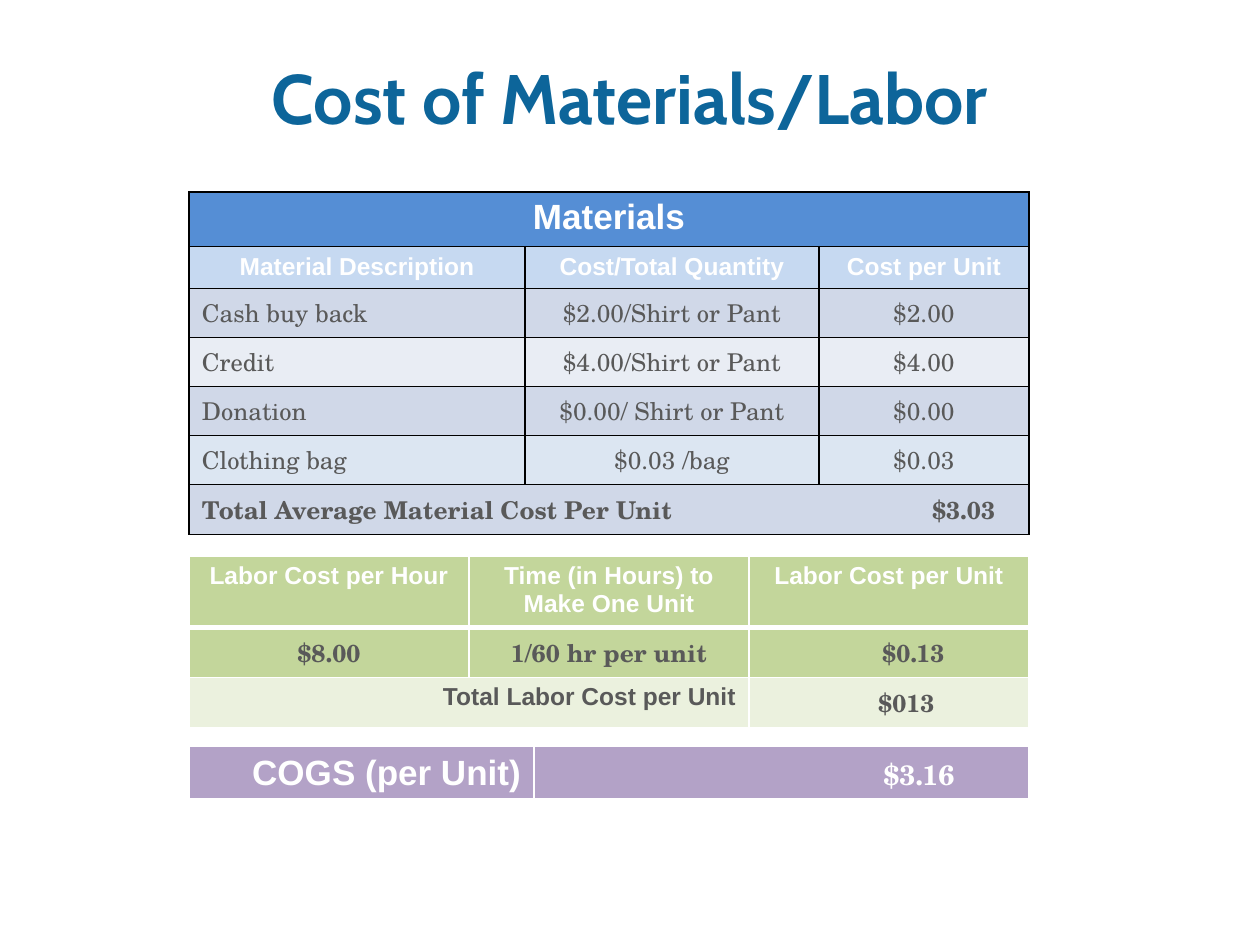
from dataclasses import dataclass
from typing import Any

from lxml.etree import SubElement
from pptx import Presentation
from pptx.dml.color import RGBColor
from pptx.enum.text import MSO_ANCHOR as Anchor, PP_ALIGN as Align
from pptx.oxml.ns import qn
from pptx.util import Emu, Pt

PX_PER_INCH = 126
INSET = 13
LEFT = 189

WHITE = RGBColor(0xFF, 0xFF, 0xFF)
BLACK = RGBColor(0x00, 0x00, 0x00)
GRAY = RGBColor(0x59, 0x59, 0x59)
TITLE_BLUE = RGBColor(0x0D, 0x65, 0x9A)
BLUE = RGBColor(0x55, 0x8E, 0xD5)
LIGHT_BLUE = RGBColor(0xC6, 0xD9, 0xF1)
BAND_DARK = RGBColor(0xD0, 0xD8, 0xE8)
BAND_LIGHT = RGBColor(0xE9, 0xED, 0xF4)
BAND_BAG = RGBColor(0xDC, 0xE6, 0xF2)
GREEN = RGBColor(0xC3, 0xD6, 0x9B)
LIGHT_GREEN = RGBColor(0xEB, 0xF1, 0xDE)
PURPLE = RGBColor(0xB3, 0xA2, 0xC7)


def px(length: int) -> Emu:
    return Emu(round(length * 914400 / PX_PER_INCH))


@dataclass(frozen=True)
class TextStyle:
    font: str
    size: int
    color: RGBColor
    bold: bool = True


@dataclass(frozen=True)
class CellSpec:
    text: str
    style: TextStyle
    align: Align = Align.CENTER
    span: int = 1
    indent: int = 0  # extra left inset, px
    tab: int = 0  # tab stop, px


@dataclass(frozen=True)
class RowSpec:
    height: int
    fill: RGBColor
    cells: list[CellSpec]
    bottom: int = 1  # lower border, points


@dataclass(frozen=True)
class TableSpec:
    top: int
    columns: list[int]
    rows: list[RowSpec]
    border: RGBColor
    anchor: Anchor = Anchor.TOP


TITLE = TextStyle("Cabin", 40, TITLE_BLUE)
BANNER = TextStyle("Arial", 20, WHITE)
HEADER = TextStyle("Arial", 14, WHITE)
LABEL = TextStyle("Arial", 14, GRAY)
BODY = TextStyle("TeX Gyre Schola", 14, GRAY, False)
STRONG = TextStyle("TeX Gyre Schola", 14, GRAY)
RESULT = TextStyle("TeX Gyre Schola", 16, WHITE)


def set_attributes(target: Any, values: dict[str, Any]) -> None:
    for name, value in values.items():
        setattr(target, name, value)


def write_text(paragraph: Any, text: str, style: TextStyle, align: Align) -> None:
    paragraph.alignment = align
    run = paragraph.add_run()
    run.text = text
    set_attributes(run.font, {"name": style.font, "size": Pt(style.size),
                              "bold": style.bold})
    run.font.color.rgb = style.color


def add_borders(cell: Any, color: RGBColor, top: int, bottom: int) -> None:
    properties = cell._tc.get_or_add_tcPr()
    widths = {"a:lnL": 1, "a:lnR": 1, "a:lnT": top, "a:lnB": bottom}
    for tag, width in widths.items():
        line = SubElement(properties, qn(tag), w=str(Pt(width)))
        fill = SubElement(line, qn("a:solidFill"))
        SubElement(fill, qn("a:srgbClr"), val=str(color))


def fill_cell(cell: Any, item: CellSpec, anchor: Anchor) -> None:
    set_attributes(cell, {"margin_left": px(INSET + item.indent),
                          "margin_right": px(INSET),
                          "vertical_anchor": anchor})
    paragraph = cell.text_frame.paragraphs[0]
    if item.tab:
        tabs = SubElement(paragraph._p.get_or_add_pPr(), qn("a:tabLst"))
        SubElement(tabs, qn("a:tab"), pos=str(px(item.tab)), algn="l")
    write_text(paragraph, item.text, item.style, item.align)


def draw_table(slide: Any, table_spec: TableSpec) -> None:
    rows, columns = table_spec.rows, table_spec.columns
    frame = slide.shapes.add_table(
        len(rows), len(columns), px(LEFT), px(table_spec.top),
        px(sum(columns)), px(sum(row.height for row in rows)))
    table = frame.table
    set_attributes(table, {"first_row": False, "horz_banding": False})
    for column, width in zip(table.columns, columns):
        column.width = px(width)
    top = 1
    for row_index, row in enumerate(rows):
        table.rows[row_index].height = px(row.height)
        for cell in table.rows[row_index].cells:
            add_borders(cell, table_spec.border, top, row.bottom)
            cell.fill.solid()
            cell.fill.fore_color.rgb = row.fill
        column_index = 0
        for item in row.cells:
            cell = table.cell(row_index, column_index)
            column_index += item.span
            if item.span > 1:
                cell.merge(table.cell(row_index, column_index - 1))
            fill_cell(cell, item, table_spec.anchor)
        top = row.bottom


def draw_title(slide: Any, text: str) -> None:
    box = slide.shapes.add_textbox(px(63), px(38), px(1134), px(141))
    set_attributes(box.text_frame, {"word_wrap": True,
                                    "vertical_anchor": Anchor.MIDDLE})
    paragraph = box.text_frame.paragraphs[0]
    paragraph.line_spacing = Pt(34)
    write_text(paragraph, text, TITLE, Align.CENTER)


def header_cells(*texts: str) -> list[CellSpec]:
    return [CellSpec(text, HEADER) for text in texts]


def material_row(fill: RGBColor, name: str, quantity: str, cost: str) -> RowSpec:
    return RowSpec(49, fill, [CellSpec(name, BODY, Align.LEFT),
                              CellSpec(quantity, BODY), CellSpec(cost, BODY)])


MATERIALS = TableSpec(192, [336, 294, 210], [
    RowSpec(51, BLUE, [CellSpec("Materials", BANNER, span=3)]),
    RowSpec(40, LIGHT_BLUE, header_cells(
        "Material Description", "Cost/Total Quantity", "Cost per Unit")),
    material_row(BAND_DARK, "Cash buy back", "$2.00/Shirt or Pant", "$2.00"),
    material_row(BAND_LIGHT, "Credit", "$4.00/Shirt or Pant", "$4.00"),
    material_row(BAND_DARK, "Donation", "$0.00/ Shirt or Pant", "$0.00"),
    material_row(BAND_BAG, "Clothing bag", "$0.03 /bag", "$0.03"),
    RowSpec(50, BAND_DARK, [CellSpec("Total Average Material Cost Per Unit\t$3.03",
                                     STRONG, Align.LEFT, span=3, tab=730)]),
], BLACK)

LABOR = TableSpec(556, [280] * 3, [
    RowSpec(68, GREEN, header_cells(
        "Labor Cost per Hour", "Time (in Hours) to Make One Unit",
        "Labor Cost per Unit"), bottom=3),
    RowSpec(50, GREEN, [CellSpec("$8.00", STRONG),
                        CellSpec("1/60 hr per unit", STRONG),
                        CellSpec("$0.13", STRONG, indent=49)]),
    RowSpec(50, LIGHT_GREEN, [
        CellSpec("Total Labor Cost per Unit", LABEL, Align.RIGHT, span=2),
        CellSpec("$013", STRONG, indent=35)]),
], WHITE)

COGS = TableSpec(746, [345, 495], [
    RowSpec(54, PURPLE, [CellSpec("COGS (per Unit)", BANNER, Align.RIGHT),
                         CellSpec("$3.16", RESULT, indent=275)], bottom=3),
], WHITE, Anchor.MIDDLE)


def main() -> None:
    presentation = Presentation()
    set_attributes(presentation, {"slide_width": px(1260),
                                  "slide_height": px(945)})
    slide = presentation.slides.add_slide(presentation.slide_layouts[6])
    draw_title(slide, "Cost of Materials/Labor")
    for table_spec in (MATERIALS, LABOR, COGS):
        draw_table(slide, table_spec)
    presentation.save("out.pptx")


if __name__ == "__main__":
    main()
